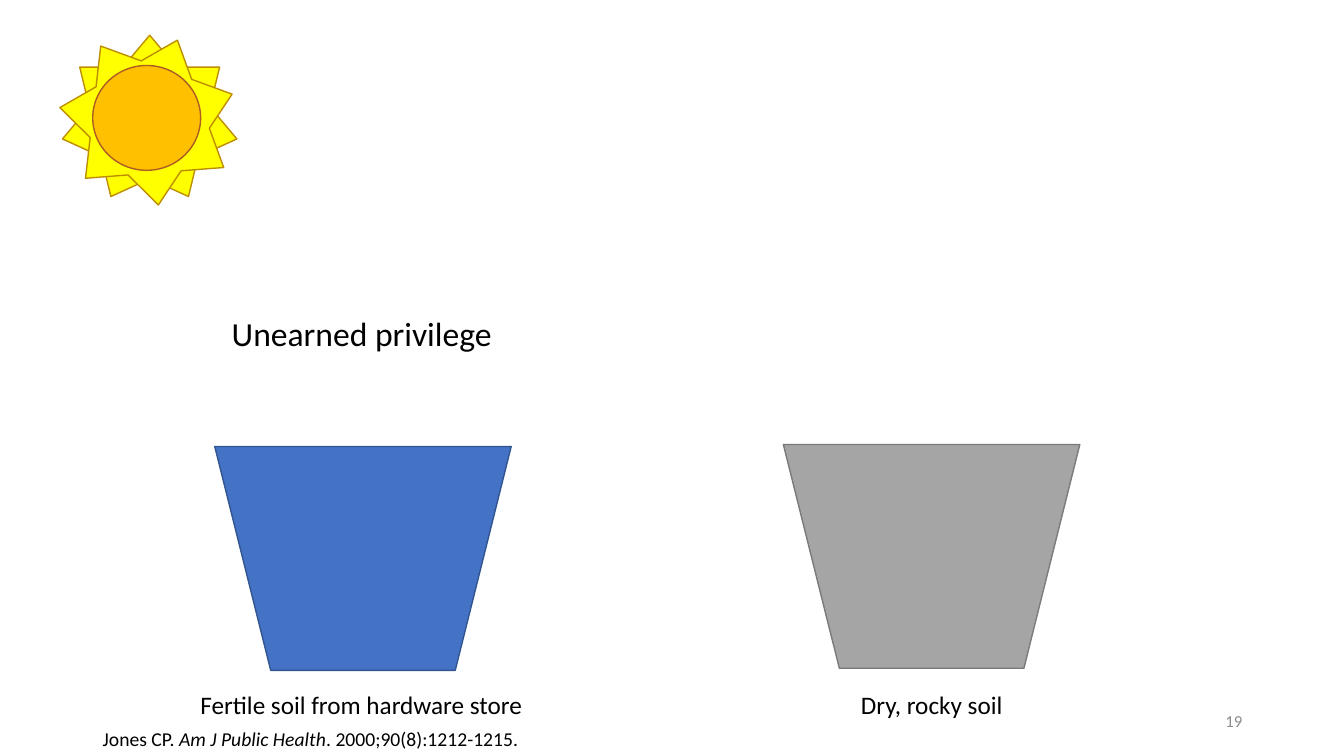
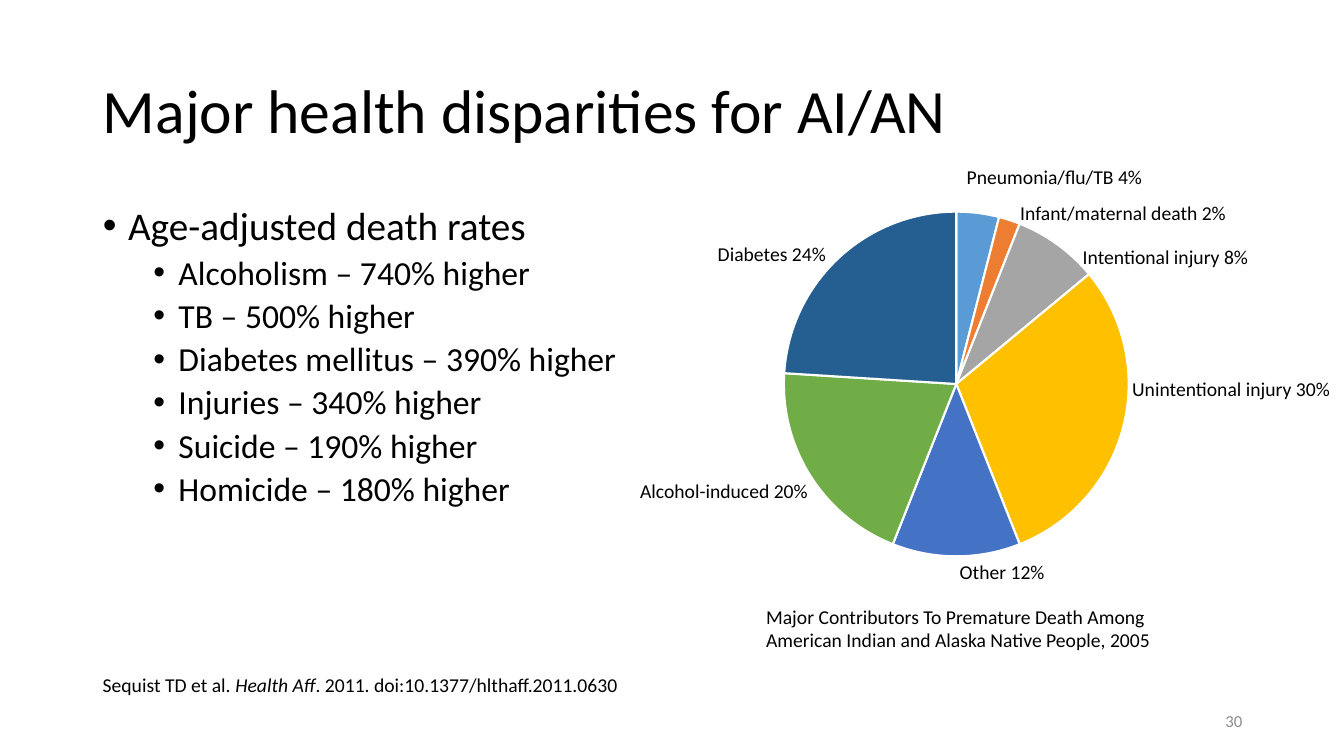
from lxml import etree
from pptx import Presentation
from pptx.chart.data import CategoryChartData
from pptx.dml.color import RGBColor
from pptx.enum import chart as charts, shapes, text
from pptx.oxml import ns
from pptx.util import Inches, Pt

FONT = "Calibri"
BLACK = RGBColor(0x00, 0x00, 0x00)
WHITE = RGBColor(0xFF, 0xFF, 0xFF)
PAGE_GRAY = RGBColor(0x8C, 0x8C, 0x8C)
BLUE = RGBColor(0x44, 0x72, 0xC4)
BLUE_EDGE = RGBColor(0x32, 0x54, 0x91)
GRAY = RGBColor(0xA5, 0xA5, 0xA5)
GRAY_EDGE = RGBColor(0x7A, 0x7A, 0x7A)
YELLOW = RGBColor(0xFF, 0xFF, 0x00)
YELLOW_EDGE = RGBColor(0xBD, 0x8E, 0x00)
GOLD = RGBColor(0xFF, 0xC0, 0x00)
GOLD_EDGE = RGBColor(0xAF, 0x5C, 0x24)
LIGHT_BLUE = RGBColor(0x5B, 0x9B, 0xD5)
ORANGE = RGBColor(0xED, 0x7D, 0x31)
GREEN = RGBColor(0x70, 0xAD, 0x47)
NAVY = RGBColor(0x25, 0x5E, 0x91)

MARGIN = 0.92
TEXT_WIDTH = 11.5
TITLE_ONLY_CONTENT, BLANK = 1, 6  # layouts of the default template


def place(shape, left, top, width, height):
    shape.left, shape.top = Inches(left), Inches(top)
    shape.width, shape.height = Inches(width), Inches(height)


class SlideBuilder:
    """Holds the shared style and the slide being built."""

    def __init__(self):
        self.deck = Presentation()
        self.deck.slide_width = Inches(13.33)
        self.deck.slide_height = Inches(7.5)
        self.page = None

    def start(self, layout, number):
        self.page = self.deck.slides.add_slide(self.deck.slide_layouts[layout])
        box = self.page.shapes.add_textbox(
            Inches(9.42), Inches(6.95), Inches(3), Inches(0.4))
        frame = box.text_frame
        frame.word_wrap = True
        frame.vertical_anchor = text.MSO_ANCHOR.MIDDLE
        para = frame.paragraphs[0]
        para.text = str(number)
        para.alignment = text.PP_ALIGN.RIGHT
        self.format(para, 12, PAGE_GRAY)

    def format(self, para, size, color=BLACK):
        for span in para.runs:
            span.font.name = FONT
            span.font.size = Pt(size)
            span.font.color.rgb = color

    def title(self, words):
        title = self.page.shapes.title
        place(title, MARGIN, 0.4, TEXT_WIDTH, 1.45)
        frame = title.text_frame
        frame.text = words
        frame.auto_size = text.MSO_AUTO_SIZE.NONE
        frame.vertical_anchor = text.MSO_ANCHOR.MIDDLE
        para = frame.paragraphs[0]
        para.alignment = text.PP_ALIGN.LEFT
        para.line_spacing = 0.9
        self.format(para, 44)

    def bullets(self, items):
        """Fill the body with (level, words) pairs."""
        body = self.page.placeholders[1]
        place(body, MARGIN, 2, TEXT_WIDTH, 4.76)
        frame = body.text_frame
        frame.text = "\n".join(words for _, words in items)
        frame.auto_size = text.MSO_AUTO_SIZE.NONE
        for para, (level, _) in zip(frame.paragraphs, items):
            para.level = level
            para.line_spacing = 0.9
            para.space_before = Pt(5 if level else 10)
            self.format(para, 24 if level else 28)
            props = para._p.get_or_add_pPr()
            props.set("marL", str(Inches(0.25 + 0.5 * level)))
            props.set("indent", str(Inches(-0.25)))
            etree.SubElement(props, ns.qn("a:buFont")).set("typeface", "Arial")
            etree.SubElement(props, ns.qn("a:buChar")).set("char", "•")

    def label(self, left, top, width, words, size=14):
        """Add an unwrapped label, as high as its lines need."""
        lines = words.split("\n")
        height = 0.1 + len(lines) * size * 1.2 / 72
        box = self.page.shapes.add_textbox(
            Inches(left), Inches(top), Inches(width), Inches(height))
        frame = box.text_frame
        frame.text = words
        frame.word_wrap = False
        frame.auto_size = text.MSO_AUTO_SIZE.SHAPE_TO_FIT_TEXT
        for para in frame.paragraphs:
            self.format(para, size)
        return box

    def citation(self, top, width, authors, journal, details):
        para = self.label(MARGIN, top, width, authors).text_frame.paragraphs[0]
        for words in (journal, details):
            para.add_run().text = words
        para.runs[1].font.italic = True
        self.format(para, 14)

    def shape(self, kind, bounds, fill, edge, rotation=0):
        shape = self.page.shapes.add_shape(kind, *map(Inches, bounds))
        shape.rotation = rotation
        shape.shadow.inherit = False
        shape.fill.solid()
        shape.fill.fore_color.rgb = fill
        shape.line.color.rgb = edge
        shape.line.width = Pt(1)

    def pie(self, bounds, diameter, slices):
        """Draw (name, value, color) slices as a centred pie."""
        data = CategoryChartData()
        data.categories = [name for name, _, _ in slices]
        data.add_series("Share of premature deaths",
                        [value for _, value, _ in slices])
        chart = self.page.shapes.add_chart(
            charts.XL_CHART_TYPE.PIE, *map(Inches, bounds), data).chart
        chart.has_legend = chart.has_title = False
        chart.font.name = FONT
        chart.font.size = Pt(10)
        chart.font.color.rgb = BLACK
        plot = chart.plots[0]
        plot.vary_by_categories = True
        for index, (_, _, color) in enumerate(slices):
            point = plot.series[0].points[index].format
            point.fill.solid()
            point.fill.fore_color.rgb = color
            point.line.color.rgb = WHITE
            point.line.width = Pt(1.5)
        # Fix the plot area so the pie keeps its diameter
        area = chart._chartSpace.find(".//" + ns.qn("c:plotArea"))
        for old in area.findall(ns.qn("c:layout")):
            area.remove(old)
        layout = etree.Element(ns.qn("c:layout"))
        area.insert(0, layout)
        manual = etree.SubElement(layout, ns.qn("c:manualLayout"))
        wide, high = diameter / bounds[2], diameter / bounds[3]
        settings = {"layoutTarget": "inner", "xMode": "edge", "yMode": "edge",
                    "x": (1 - wide) / 2, "y": (1 - high) / 2,
                    "w": wide, "h": high}
        for name, value in settings.items():
            etree.SubElement(manual, ns.qn("c:" + name)).set("val", str(value))


def build_flower_pots(slides):
    slides.start(BLANK, 19)
    # Pots
    pot = shapes.MSO_SHAPE.TRAPEZOID
    slides.shape(pot, (2.13, 4.43, 2.94, 2.22), BLUE, BLUE_EDGE, 180)
    slides.shape(pot, (7.77, 4.41, 2.94, 2.22), GRAY, GRAY_EDGE, 180)
    # Sun
    for rotation in (0, 20.1):
        slides.shape(shapes.MSO_SHAPE.STAR_7_POINT, (0.62, 0.35, 1.73, 1.6),
                     YELLOW, YELLOW_EDGE, rotation)
    slides.shape(shapes.MSO_SHAPE.OVAL, (0.92, 0.65, 1.07, 1.04),
                 GOLD, GOLD_EDGE)
    # Captions
    slides.label(2.2, 3.06, 2.81, "Unearned privilege", 24)
    slides.label(1.89, 6.79, 3.43, "Fertile soil from hardware store", 18)
    slides.label(8.44, 6.79, 1.62, "Dry, rocky soil", 18)
    slides.citation(7.16, 4.36, "Jones CP. ", "Am J Public Health",
                    ". 2000;90(8):1212-1215.")


def build_disparities(slides):
    slides.start(TITLE_ONLY_CONTENT, 30)
    slides.title("Major health disparities for AI/AN")
    # Death rates
    rates = [("Alcoholism", 740), ("TB", 500), ("Diabetes mellitus", 390),
             ("Injuries", 340), ("Suicide", 190), ("Homicide", 180)]
    slides.bullets([(0, "Age-adjusted death rates")] +
                   [(1, f"{cause} – {rate}% higher") for cause, rate in rates])
    # Pie: name, percent, color, then the label's left, top and width
    causes = [
        ("Pneumonia/flu/TB", 4, LIGHT_BLUE, 9.49, 1.59, 1.96),
        ("Infant/maternal death", 2, ORANGE, 10.02, 1.94, 2.26),
        ("Intentional injury", 8, GRAY, 10.64, 2.38, 1.86),
        ("Unintentional injury", 30, GOLD, 11.13, 3.69, 2.19),
        ("Other", 12, BLUE, 9.42, 5.51, 1.05),
        ("Alcohol-induced", 20, GREEN, 6.25, 4.7, 1.88),
        ("Diabetes", 24, NAVY, 7.02, 2.35, 1.29),
    ]
    slides.pie((6.87, 1.96, 5.23, 3.7), 3.42, [cause[:3] for cause in causes])
    for name, percent, _, left, top, width in causes:
        slides.label(left, top, width, f"{name} {percent}%")
    # Caption and source
    slides.label(7.5, 5.95, 4.07,
                 "Major Contributors To Premature Death Among\n"
                 "American Indian and Alaska Native People, 2005")
    slides.citation(6.63, 5.37, "Sequist TD et al. ", "Health Aff",
                    ". 2011. doi:10.1377/hlthaff.2011.0630")


def main():
    slides = SlideBuilder()
    build_flower_pots(slides)
    build_disparities(slides)
    slides.deck.save("out.pptx")


if __name__ == "__main__":
    main()
